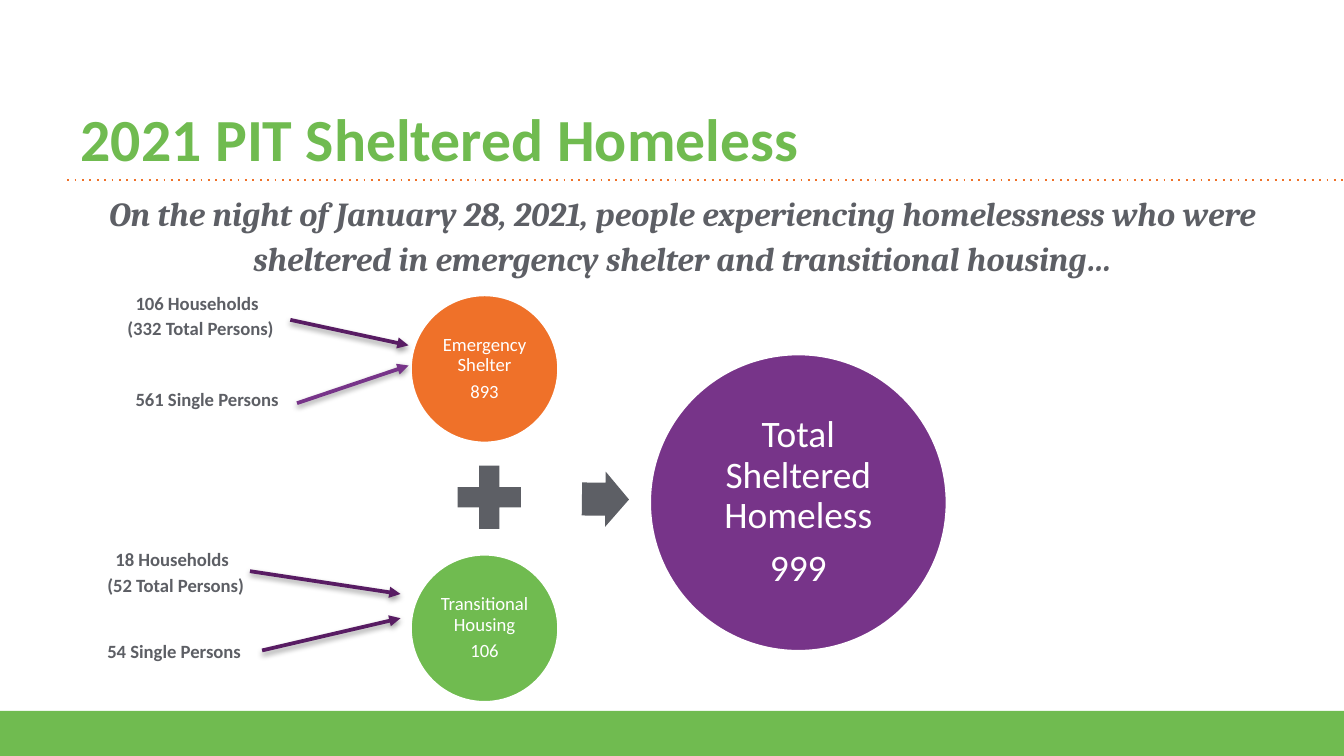
from lxml import etree
from pptx import Presentation
from pptx.dml.color import RGBColor
from pptx.enum.shapes import MSO_CONNECTOR, MSO_SHAPE
from pptx.enum.text import MSO_ANCHOR, MSO_AUTO_SIZE, PP_ALIGN
from pptx.oxml import parse_xml
from pptx.oxml.ns import nsdecls, qn
from pptx.util import Inches, Pt

W = 10
H = W * 9 / 16
MARGIN = 0.5
RULE_Y = 1.34
BAR_Y = 5.29
COLORS = {"green": "70BB50", "orange": "EF7129", "purple": "773489",
          "plum": "581C63", "gray": "5D5F65", "white": "FFFFFF"}

TITLE = "2021 PIT Sheltered Homeless"
INTRO = ("On the night of January 28, 2021, people experiencing homelessness who were "
         "sheltered in emergency shelter and transitional housing…")
# name, count, left, top, diameter, colour, text size, inset
CIRCLES = [
    ("Emergency Shelter", "893", 3.05, 2.19, 1.11, "orange", 10, 0.01),
    ("Transitional Housing", "106", 3.05, 4.12, 1.11, "green", 10, 0.01),
    ("Total Sheltered Homeless", "999", 4.83, 2.63, 2.22, "purple", 20, 0.03),
]
# lines, left, top, width, height
LABELS = [
    (["106 Households", "(332 Total Persons)"], 0.85, 2.01, 1.71, 0.57),
    (["561 Single Persons"], 0.85, 2.73, 2.02, 0.4),
    (["18 Households", "(52 Total Persons)"], 0.7, 3.92, 2.02, 0.57),
    (["54 Single Persons"], 0.64, 4.6, 2.02, 0.57),
]
# start, end, colour
ARROWS = [
    ((2.16, 2.38), (3.04, 2.57), "plum"),
    ((2.21, 3), (3.04, 2.72), "purple"),
    ((1.86, 4.25), (2.98, 4.42), "plum"),
    ((1.95, 4.84), (2.98, 4.6), "plum"),
]
SHADOW = (f'<a:effectLst {nsdecls("a")}><a:outerShdw blurRad="{Pt(3.1)}" dist="{Pt(1.6)}" '
          'dir="5400000" rotWithShape="0"><a:srgbClr val="000000"><a:alpha val="38000"/>'
          '</a:srgbClr></a:outerShdw></a:effectLst>')


def rgb(name):
    return RGBColor.from_string(COLORS[name])


def style(p, size, color, font="Calibri", bold=False, italic=False):
    for r in p.runs:
        f = r.font
        f.name, f.size, f.bold, f.italic = font, Pt(size), bold, italic
        f.color.rgb = rgb(color)


def add_shape(s, kind, left, top, width, height, color):
    sp = s.shapes.add_shape(kind, *map(Inches, (left, top, width, height)))
    sp.shadow.inherit = False
    sp.fill.solid()
    sp.fill.fore_color.rgb = rgb(color)
    sp.line.fill.background()
    return sp


def add_textbox(s, left, top, width, height):
    tf = s.shapes.add_textbox(*map(Inches, (left, top, width, height))).text_frame
    tf.word_wrap = True
    return tf


def add_line(s, start, end, color, width, ending, effects):
    """Draw a line; ending is a (tag, attributes) pair added to its a:ln."""
    line = s.shapes.add_connector(MSO_CONNECTOR.STRAIGHT, *map(Inches, start + end))
    line.line.color.rgb = rgb(color)
    line.line.width = Pt(width)
    tag, attributes = ending
    etree.SubElement(line.line._get_or_add_ln(), qn(tag), attributes)
    line._element.spPr.append(parse_xml(effects))


def add_title(s):
    title = s.shapes.title
    title.left, title.top = Inches(MARGIN), 0
    title.width, title.height = Inches(W - 2 * MARGIN), Inches(RULE_Y)
    tf = title.text_frame
    tf.text = TITLE
    tf.auto_size, tf.word_wrap = MSO_AUTO_SIZE.NONE, False
    tf.vertical_anchor = MSO_ANCHOR.BOTTOM
    p = tf.paragraphs[0]
    p.alignment, p.line_spacing = PP_ALIGN.LEFT, 0.8
    style(p, 32, "green", bold=True)


def add_intro(s):
    p = add_textbox(s, MARGIN, 1.36, 9.16, 3.94).paragraphs[0]
    p.text = INTRO
    p.alignment, p.line_spacing = PP_ALIGN.CENTER, 1.1
    style(p, 18, "gray", "Cambria", bold=True, italic=True)


def add_circle(s, name, count, left, top, diameter, color, size, inset):
    sp = add_shape(s, MSO_SHAPE.OVAL, left, top, diameter, diameter, color)
    sp.line.color.rgb = rgb("white")
    sp.line.width = Pt(2)
    tf = sp.text_frame
    tf.text = f"{name}\n{count}"
    tf.word_wrap, tf.vertical_anchor = True, MSO_ANCHOR.MIDDLE
    tf.margin_left = tf.margin_right = tf.margin_top = tf.margin_bottom = Inches(inset)
    for p in tf.paragraphs:
        p.alignment, p.line_spacing = PP_ALIGN.CENTER, 0.9
        p.space_after = Pt(0.35 * size)
        style(p, size, "white")


def add_label(s, lines, *box):
    tf = add_textbox(s, *box)
    tf.margin_top = Inches(0.16)
    tf.text = "\n".join(lines)
    tf.paragraphs[0]._p.get_or_add_pPr().set("indent", str(Inches(0.06)))
    for p in tf.paragraphs[1:]:
        p.space_before = Pt(1.5)
    for p in tf.paragraphs:
        style(p, 10, "gray", bold=True)


def main():
    prs = Presentation()
    prs.slide_width, prs.slide_height = Inches(W), Inches(H)
    s = prs.slides.add_slide(prs.slide_layouts[5])
    add_shape(s, MSO_SHAPE.RECTANGLE, 0, BAR_Y, W, H - BAR_Y, "green")
    add_line(s, (MARGIN, RULE_Y), (W, RULE_Y), "orange", 1,
             ("a:prstDash", {"val": "dot"}), f'<a:effectLst {nsdecls("a")}/>')
    add_title(s)
    add_intro(s)
    for circle in CIRCLES:
        add_circle(s, *circle)
    add_shape(s, MSO_SHAPE.MATH_PLUS, 3.32, 3.38, 0.64, 0.64, "gray")
    arrow = add_shape(s, MSO_SHAPE.RIGHT_ARROW, 4.33, 3.51, 0.35, 0.41, "gray")
    arrow.adjustments[0] = 0.6
    arrow.rotation = 0.7
    for label in LABELS:
        add_label(s, *label)
    for start, end, color in ARROWS:
        add_line(s, start, end, color, 2, ("a:tailEnd", {"type": "triangle"}), SHADOW)
    prs.save("out.pptx")


if __name__ == "__main__":
    main()
